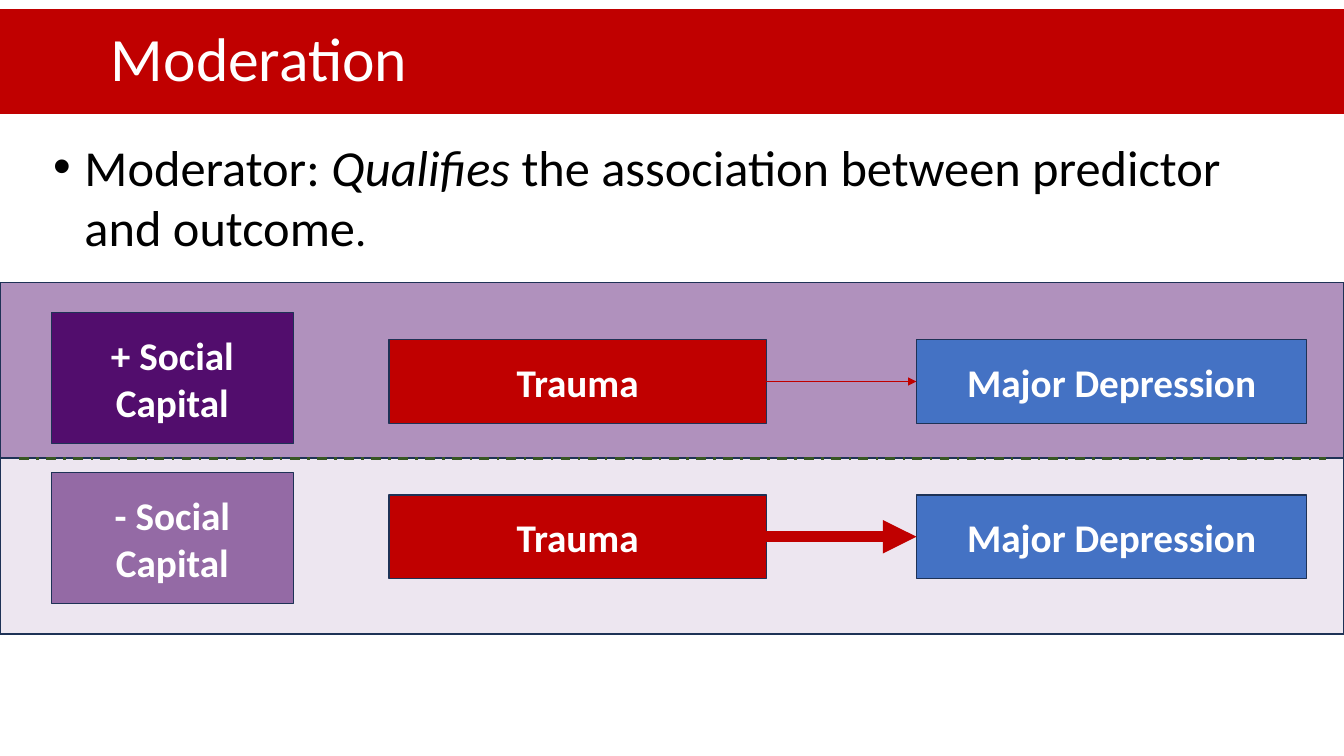
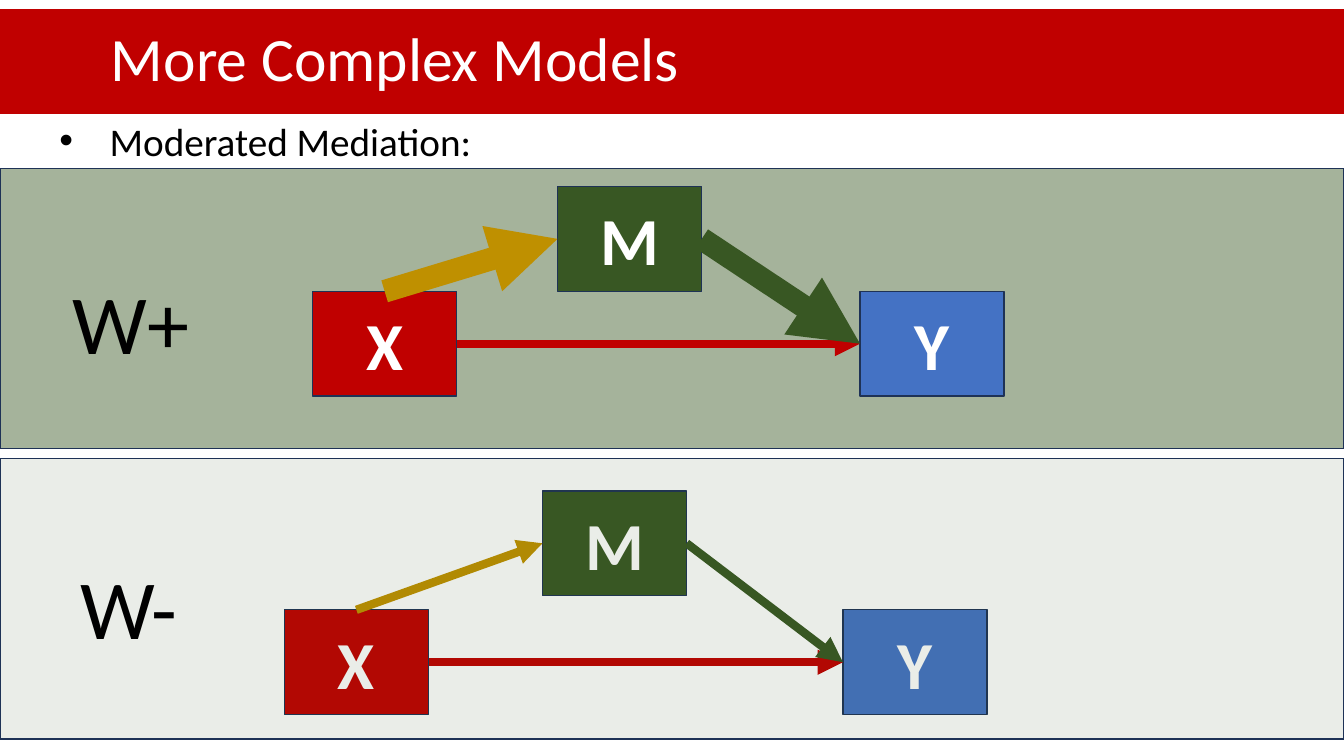
from dataclasses import dataclass
from lxml.etree import SubElement
from pptx import Presentation
from pptx.dml.color import RGBColor as RGB
from pptx.enum.dml import MSO_LINE as Dash
from pptx.enum.shapes import MSO_CONNECTOR as Link, MSO_SHAPE as Shape
from pptx.enum.text import MSO_ANCHOR as Anchor, PP_ALIGN as Align
from pptx.oxml.ns import qn
from pptx.util import Inches, Pt


@dataclass(frozen=True)
class Theme:
    font: str = "Calibri"
    red: str = "C00000"
    blue: str = "4472C4"
    green: str = "385723"
    gold: str = "BF9000"
    purple: str = "520D6D"
    edge: str = "1E3256"
    white: str = "FFFFFF"
    black: str = "000000"
    title: int = 44
    lead: int = 36
    body: int = 28
    node: int = 48
    group: int = 60


T = Theme()
WIDTH, HEIGHT = 13.33, 7.5
TOP, LEFT, BOTTOM, RIGHT = range(4)

# Each run: text, size, italic
MODERATOR = [("Moderator: ", T.lead, False), ("Qualifies", T.lead, True),
             (" the association between predictor and outcome", T.lead, False),
             (".", T.body + 4, False)]
MEDIATION = [("Moderated Mediation:", T.body, False)]

# Label, label opacity, label top, box top, band top, band opacity, arrow weight
LEVELS = [("+ Social Capital", 100, 3.1, 3.37, 2.8, 45, 1.25),
          ("- Social Capital", 57, 4.69, 4.91, 4.55, 10, 8)]

# Label, label spot, band top, band opacity, band in front, path weight, node spots
GROUPS = [
    ("W+", (0.62, 2.63), 1.67, 45, False, 16.25,
     {"X": (3.1, 2.89), "Y": (8.53, 2.89), "M": (5.53, 1.85)}),
    ("W-", (0.7, 5.46), 4.55, 10, True, 6,
     {"X": (2.82, 6.05), "Y": (8.36, 6.05), "M": (5.38, 4.87)}),
]
NODES = {"X": T.red, "Y": T.blue, "M": T.green}
DIRECT = 6


def style(run, size, color, bold=False, italic=False):
    font = run.font
    font.name, font.size = T.font, Pt(size)
    font.bold, font.italic = bold, italic
    font.color.rgb = RGB.from_string(color)


def block(slide, at, fill, alpha=100, edge=True):
    """Draw a filled rectangle; alpha is its opacity in percent."""
    shape = slide.shapes.add_shape(Shape.RECTANGLE, *map(Inches, at))
    shape.shadow.inherit = False
    shape.fill.solid()
    shape.fill.fore_color.rgb = RGB.from_string(fill)
    if alpha < 100:
        color = shape.element.spPr.find(qn("a:solidFill"))[0]
        SubElement(color, qn("a:alpha"), val=str(alpha * 1000))
    if edge:
        shape.line.color.rgb = RGB.from_string(T.edge)
        shape.line.width = Pt(1)
    else:
        shape.line.fill.background()
    return shape


def box(slide, at, fill, text, size, alpha=100):
    shape = block(slide, at, fill, alpha)
    frame = shape.text_frame
    frame.text = text
    frame.word_wrap = True
    frame.vertical_anchor = Anchor.MIDDLE
    para = frame.paragraphs[0]
    para.alignment = Align.CENTER
    style(para.runs[0], size, T.white, bold=True)
    return shape


def stroke(slide, color, weight, start=(0, 0), end=(0, 0)):
    line = slide.shapes.add_connector(Link.STRAIGHT, *map(Inches, start + end))
    line.line.color.rgb = RGB.from_string(color)
    line.line.width = Pt(weight)
    SubElement(line.element.spPr, qn("a:effectLst"))
    return line


def arrow(slide, tail, out, head, into, color, weight):
    """Join side `out` of tail to side `into` of head."""
    line = stroke(slide, color, weight)
    line.begin_connect(tail, out)
    line.end_connect(head, into)
    SubElement(line.element.spPr.find(qn("a:ln")), qn("a:tailEnd"), type="triangle")


def note(slide, at, runs, indent=0):
    """Add a text box, with a bullet if there is an indent."""
    frame = slide.shapes.add_textbox(*map(Inches, at)).text_frame
    frame.word_wrap = True
    para = frame.paragraphs[0]
    for text, size, italic in runs:
        run = para.add_run()
        run.text = text
        style(run, size, T.black, italic=italic)
    if indent:
        para.space_before = Pt(12)
        props = para._p.get_or_add_pPr()
        props.set("marL", str(Inches(indent)))
        props.set("indent", str(-Inches(indent)))
        SubElement(props, qn("a:buFont"), typeface="Arial")
        SubElement(props, qn("a:buChar"), char="•")


def page(deck, title):
    slide = deck.slides.add_slide(deck.slide_layouts[6])
    frame = block(slide, (0, 0.09, WIDTH, 1.04), T.red, edge=False).text_frame
    frame.text = title
    frame.margin_left = Inches(1.1)
    frame.vertical_anchor = Anchor.MIDDLE
    para = frame.paragraphs[0]
    para.alignment = Align.LEFT
    para.line_spacing = 0.9
    style(para.runs[0], T.title, T.white)
    return slide


def moderation(deck):
    slide = page(deck, "Moderation")
    note(slide, (0.43, 1.3, 12.03, 1.95), MODERATOR, 0.31)
    for _, _, _, _, top, shade, _ in LEVELS:
        block(slide, (0, top, WIDTH, 1.74), T.purple, shade)
    for label, alpha, high, mid, _, _, weight in LEVELS:
        box(slide, (0.51, high, 2.4, 1.3), T.purple, label, T.body, alpha)
        cause = box(slide, (3.86, mid, 3.74, 0.83), T.red, "Trauma", T.body)
        effect = box(slide, (9.09, mid, 3.87, 0.83), T.blue, "Major Depression", T.body)
        arrow(slide, cause, RIGHT, effect, LEFT, T.red, weight)
    split = stroke(slide, T.green, 1.75, (0.19, 4.55), (13.15, 4.55))
    split.line.dash_style = Dash.DASH_DOT


def models(deck):
    slide = page(deck, "More Complex Models")
    note(slide, (0.49, 1.11, 12.03, 1.21), MEDIATION, 0.5)
    for label, spot, top, shade, front, weight, spots in GROUPS:
        band = (0, top, WIDTH, 2.78), T.green, shade
        if not front:
            block(slide, *band)
        node = {name: box(slide, (*at, 1.43, 1.04), NODES[name], name, T.node)
                for name, at in spots.items()}
        arrow(slide, node["X"], RIGHT, node["Y"], LEFT, T.red, DIRECT)
        arrow(slide, node["X"], TOP, node["M"], LEFT, T.gold, weight)
        arrow(slide, node["M"], RIGHT, node["Y"], LEFT, T.green, weight)
        if front:
            block(slide, *band)
        note(slide, (*spot, 1.43, 1.11), [(label, T.group, False)])


def main():
    deck = Presentation()
    deck.slide_width, deck.slide_height = Inches(WIDTH), Inches(HEIGHT)
    moderation(deck)
    models(deck)
    deck.save("out.pptx")


if __name__ == "__main__":
    main()
